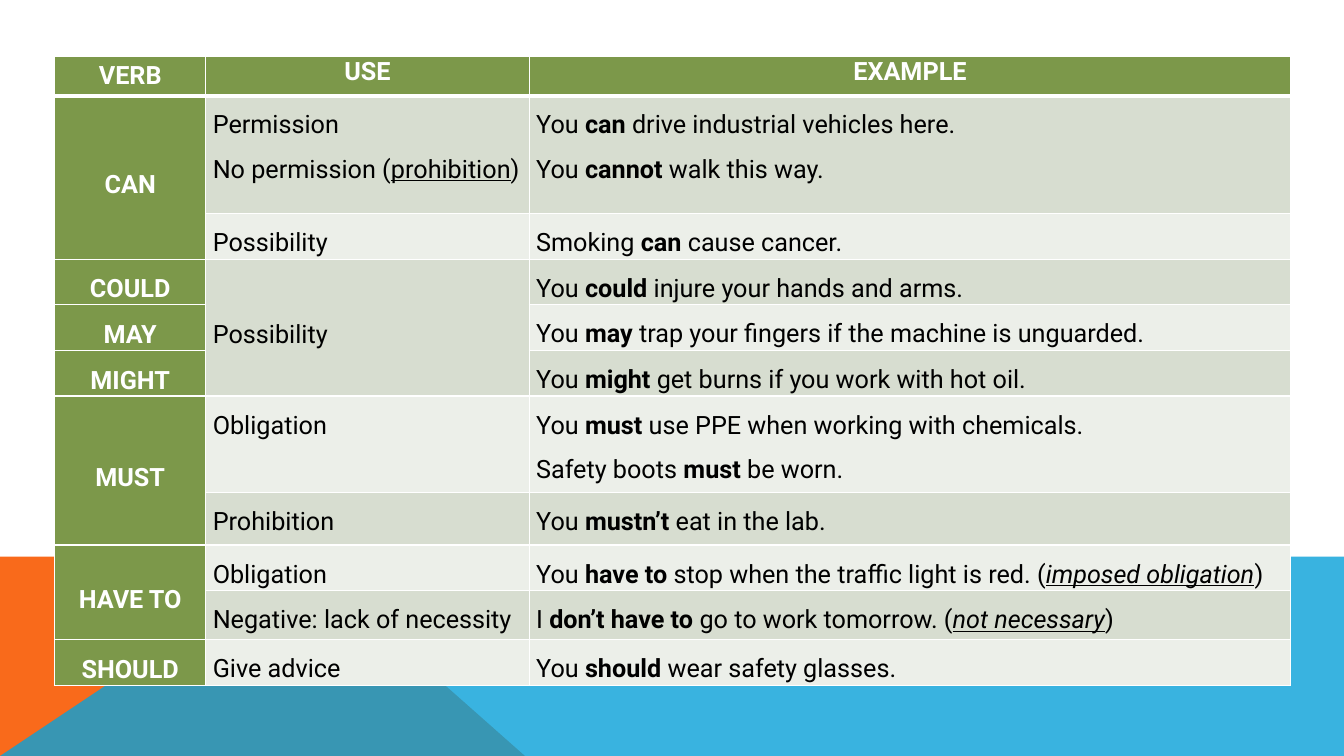
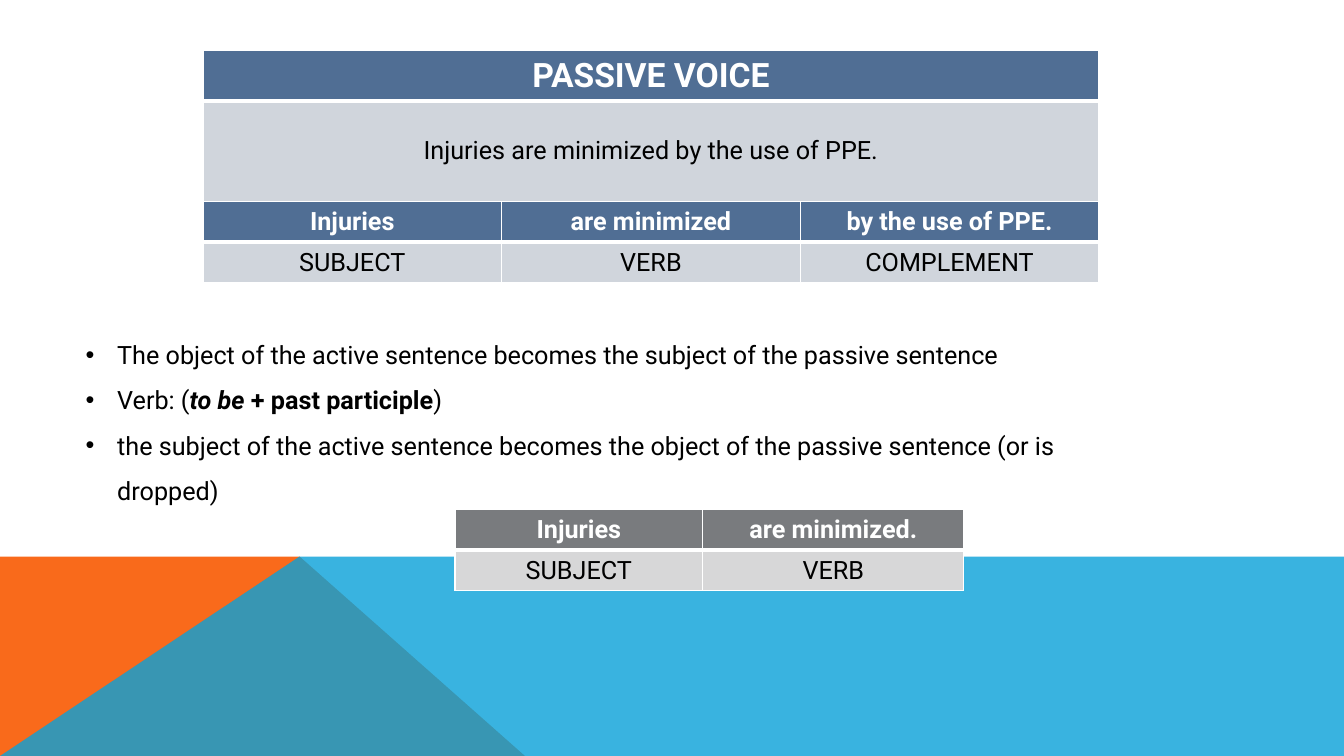
"""Build two grammar slides: modal verbs and the passive voice."""
import dataclasses

import lxml.etree
import pptx
import pptx.dml.color
import pptx.enum.text
import pptx.oxml.ns
import pptx.util

Pt = pptx.util.Pt
qn = pptx.oxml.ns.qn
ALIGN = pptx.enum.text.PP_ALIGN
ANCHOR = pptx.enum.text.MSO_ANCHOR


@dataclasses.dataclass(frozen=True)
class Theme:
    font: str = "Roboto"
    heading: int = 24
    body: int = 18
    leading: float = 1.5
    ink: str = "000000"
    white: str = "FFFFFF"
    orange: str = "F96A1B"
    sky: str = "08A1D9"
    green: tuple = ("7C984A", "D7DDD0", "ECEFE9")
    blue: tuple = ("506E94", "D0D5DC", "D0D5DC")
    gray: tuple = ("797B7E", "D7D7D8", "D7D7D8")


THEME = Theme()


def rgb(value):
    return pptx.dml.color.RGBColor.from_string(value)


def write(frame, content, size=THEME.body, color=THEME.ink, bold=False,
          align=ALIGN.LEFT, leading=1.0, indent=0):
    for number, line in enumerate(content.split("\n")):
        paragraph = frame.paragraphs[0] if number == 0 else frame.add_paragraph()
        paragraph.alignment = align
        paragraph.line_spacing = leading
        paragraph.space_before = Pt(0)
        if indent:
            properties = paragraph._p.get_or_add_pPr()
            properties.set("marL", str(Pt(indent)))
            properties.set("indent", str(-Pt(indent)))
        for position, piece in enumerate(line.split("|")):
            marks, words = piece.split(":", 1) if position % 2 and piece else ("", piece)
            if not words:
                continue
            run = paragraph.add_run()
            run.text = words
            run.font.name = THEME.font
            run.font.size = Pt(size)
            run.font.color.rgb = rgb(color)
            run.font.bold = bold or "b" in marks
            run.font.italic = "i" in marks
            run.font.underline = "u" in marks


class Deck:
    def __init__(self, theme):
        self.theme = theme
        self.presentation = pptx.Presentation()
        self.presentation.slide_width = Pt(960)
        self.presentation.slide_height = Pt(540)
        self.slide = None

    def new_slide(self, layout):
        self.slide = self.presentation.slides.add_slide(
            self.presentation.slide_layouts[layout])
        horizon, peak = 397.5, 214
        self.band([(0, 540), (0, horizon), (peak, horizon), (375, 540)],
                  self.theme.orange)
        self.band([(0, 540), (peak, horizon), (960, horizon), (960, 540)],
                  self.theme.sky, opacity=80)

    def band(self, corners, color, opacity=100):
        start, *others = [(Pt(x), Pt(y)) for x, y in corners]
        outline = self.slide.shapes.build_freeform(*start)
        outline.add_line_segments(others, close=True)
        band = outline.convert_to_shape()
        band.shadow.inherit = False
        band.line.fill.background()
        band.fill.solid()
        band.fill.fore_color.rgb = rgb(color)
        if opacity < 100:
            tint = band._element.spPr.find(qn("a:solidFill"))[0]
            lxml.etree.SubElement(tint, qn("a:alpha"), val=str(opacity * 1000))

    def borders(self, cell, row):
        properties = cell._tc.get_or_add_tcPr()
        widths = {"L": 1, "R": 1, "T": 3 if row == 1 else 1, "B": 3 if row == 0 else 1}
        for side, width in widths.items():
            edge = lxml.etree.SubElement(properties, qn(f"a:ln{side}"), w=str(Pt(width)))
            fill = lxml.etree.SubElement(edge, qn("a:solidFill"))
            lxml.etree.SubElement(fill, qn("a:srgbClr"), val=self.theme.white)

    def table(self, left, top, widths, heights, rows, palette,
              side_heads=False, heading=None):
        """Draw a table in which None continues the cell above."""
        grid = self.slide.shapes.add_table(
            len(rows), len(widths), Pt(left), Pt(top),
            Pt(sum(widths)), Pt(sum(heights))).table
        grid.horz_banding = False
        for column, width in zip(grid.columns, widths):
            column.width = Pt(width)
        for line, height in zip(grid.rows, heights):
            line.height = Pt(height)
        for row, entries in enumerate(rows):
            for column, content in enumerate(entries):
                cell = grid.cell(row, column)
                head = row == 0 or (side_heads and column == 0)
                self.borders(cell, row)
                cell.fill.solid()
                cell.fill.fore_color.rgb = rgb(palette[0 if head else 2 - row % 2])
                if content is None:
                    continue
                last = row
                while last + 1 < len(rows) and rows[last + 1][column] is None:
                    last += 1
                if last > row:
                    cell.merge(grid.cell(last, column))
                if side_heads:
                    cell.margin_left = cell.margin_right = Pt(5)
                    cell.margin_top = cell.margin_bottom = Pt(0)
                middle = not side_heads or column == 0 or last > row
                cell.vertical_anchor = ANCHOR.MIDDLE if middle else ANCHOR.TOP
                write(cell.text_frame, content,
                      size=heading if heading and row == 0 else self.theme.body,
                      color=self.theme.white if head else self.theme.ink, bold=head,
                      align=ALIGN.CENTER if head or not side_heads else ALIGN.LEFT,
                      leading=self.theme.leading if side_heads and row else 1.0)

    def bullets(self, left, top, width, height, content):
        title, body = self.slide.shapes.title, self.slide.placeholders[1]
        title.element.getparent().remove(title.element)
        body.left, body.top, body.width, body.height = map(Pt, (left, top, width, height))
        frame = body.text_frame
        frame.word_wrap = True
        frame.auto_size = pptx.enum.text.MSO_AUTO_SIZE.NONE
        frame.vertical_anchor = ANCHOR.TOP
        write(frame, content, leading=self.theme.leading, indent=22.5)


MODALS = [
    ("VERB", "USE", "EXAMPLE"),
    ("CAN", "Permission\nNo permission (|u:prohibition|)",
     "You |b:can| drive industrial vehicles here.\nYou |b:cannot| walk this way."),
    (None, "Possibility", "Smoking |b:can| cause cancer."),
    ("COULD", "Possibility", "You |b:could| injure your hands and arms."),
    ("MAY", None, "You |b:may| trap your fingers if the machine is unguarded."),
    ("MIGHT", None, "You |b:might| get burns if you work with hot oil."),
    ("MUST", "Obligation",
     "You |b:must| use PPE when working with chemicals.\nSafety boots |b:must| be worn."),
    (None, "Prohibition", "You |b:mustn’t |eat in the lab."),
    ("HAVE TO", "Obligation",
     "You |b:have to |stop when the traffic light is red. (|iu:imposed obligation|)"),
    (None, "Negative: lack of necessity",
     "I |b:don’t have to |go to work tomorrow. (|iu:not necessary|)"),
    ("SHOULD", "Give advice", "You |b:should |wear safety glasses."),
]

PASSIVE_RULES = (
    "The object of the active sentence becomes the subject of the passive sentence\n"
    "Verb: (|bi:to be||b: + past participle|)\n"
    "the subject of the active sentence becomes the object of the passive sentence "
    "(or is dropped)")


def main():
    deck = Deck(THEME)
    single = 32.6
    deck.new_slide(6)
    deck.table(39, 40.5, [108, 231, 544],
               [28, 84, *[single] * 4, 69, 37.4, single, 35.2, single],
               MODALS, THEME.green, side_heads=True)

    deck.new_slide(1)
    deck.table(145, 36, [640], [36, 72],
               [("PASSIVE VOICE",), ("Injuries are minimized by the use of PPE.",)],
               THEME.blue, heading=THEME.heading)
    deck.table(145, 144, [640 / 3] * 3, [29, 29],
               [("Injuries", "are minimized", "by the use of PPE."),
                ("SUBJECT", "VERB", "COMPLEMENT")], THEME.blue)
    deck.table(325, 364, [177, 186.5], [29, 29],
               [("Injuries", "are minimized."), ("SUBJECT", "VERB")], THEME.gray)
    deck.bullets(54, 228, 770, 128, PASSIVE_RULES)
    deck.presentation.save("out.pptx")


if __name__ == "__main__":
    main()
